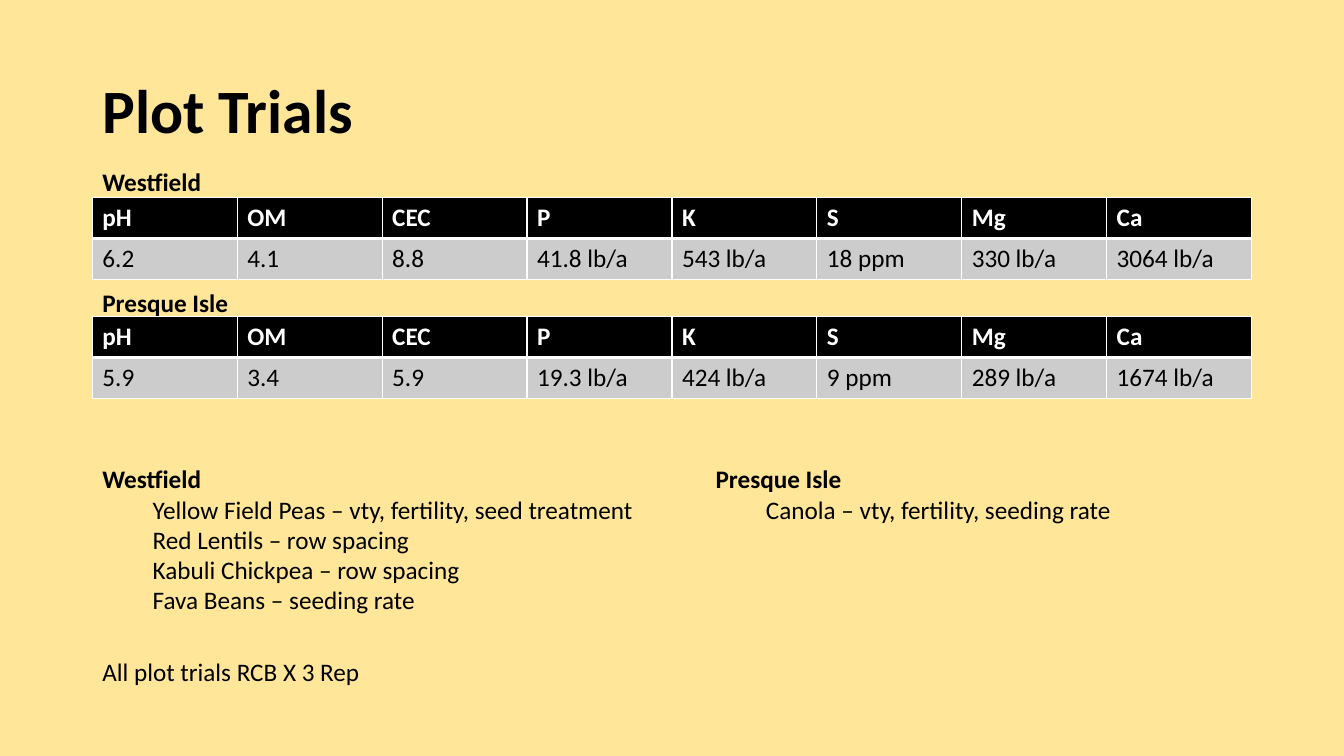
from lxml import etree
from pptx import Presentation
from pptx.dml.color import RGBColor
from pptx.enum import text as t
from pptx.oxml.ns import qn
from pptx.util import Pt

SAND = RGBColor(0xFF, 0xE6, 0x99)
BLACK = RGBColor(0, 0, 0)
WHITE = RGBColor(255, 255, 255)
GRAY = RGBColor(0xCC, 0xCC, 0xCC)
FONT = "Calibri"

TITLE = "Plot Trials"
NUTRIENTS = ["pH", "OM", "CEC", "P", "K", "S", "Mg", "Ca"]
SOIL_TESTS = [
    ("Westfield", 115.2, 141.1,
     ["6.2", "4.1", "8.8", "41.8 lb/a", "543 lb/a", "18 ppm", "330 lb/a", "3064 lb/a"]),
    ("Presque Isle", 201.6, 226.1,
     ["5.9", "3.4", "5.9", "19.3 lb/a", "424 lb/a", "9 ppm", "289 lb/a", "1674 lb/a"]),
]
TRIALS = [
    ("Westfield", 66, 116.6,
     ["Yellow Field Peas – vty, fertility, seed treatment", "Red Lentils – row spacing",
      "Kabuli Chickpea – row spacing", "Fava Beans – seeding rate"]),
    ("Presque Isle", 504, 51.1, ["Canola – vty, fertility, seeding rate"]),
]
FOOTNOTE = "All plot trials RCB X 3 Rep"

LEFT, WIDTH, ROW_HEIGHT = 66, 828, 29.2
TRIALS_TOP, TRIALS_WIDTH = 327.6, 480
LINE_HEIGHT = 29.1
INDENT = 36


def style(para, size=18, bold=False, color=BLACK):
    para.font.name = FONT
    para.font.size = Pt(size)
    para.font.bold = bold
    para.font.color.rgb = color


def add_text(page, left, top, width, height, heading, items=(), size=18, bold=True):
    box = page.shapes.add_textbox(Pt(left), Pt(top), Pt(width), Pt(height))
    frame = box.text_frame
    frame.word_wrap = True
    frame.text = heading
    style(frame.paragraphs[0], size, bold)
    for item in items:
        para = frame.add_paragraph()
        para.text = item
        para.level = 1
        properties = para._p.get_or_add_pPr()
        properties.set("marL", str(Pt(INDENT)))
        properties.set("indent", "0")
        style(para)
    return frame


def add_borders(cell, widths):
    properties = cell._tc.get_or_add_tcPr()
    for position, (side, width) in enumerate(zip("LRTB", widths)):
        line = etree.Element(qn(f"a:ln{side}"), w=str(Pt(width)))
        fill = etree.SubElement(line, qn("a:solidFill"))
        etree.SubElement(fill, qn("a:srgbClr"), val=str(WHITE))
        properties.insert(position, line)


def add_soil_table(page, top, values):
    rows = [(NUTRIENTS, BLACK, WHITE, True, (1, 1, 1, 3)),
            (values, GRAY, BLACK, False, (1, 1, 3, 1))]
    table = page.shapes.add_table(len(rows), len(NUTRIENTS), Pt(LEFT), Pt(top),
                                  Pt(WIDTH), Pt(ROW_HEIGHT * len(rows))).table
    for column in table.columns:
        column.width = Pt(WIDTH / len(NUTRIENTS))
    for r, (words, fill, color, bold, widths) in enumerate(rows):
        table.rows[r].height = Pt(ROW_HEIGHT)
        for c, word in enumerate(words):
            cell = table.cell(r, c)
            cell.text = word
            cell.fill.solid()
            cell.fill.fore_color.rgb = fill
            style(cell.text_frame.paragraphs[0], bold=bold, color=color)
            add_borders(cell, widths)


def main():
    deck = Presentation()
    deck.slide_width, deck.slide_height = Pt(960), Pt(540)
    page = deck.slides.add_slide(deck.slide_layouts[6])
    page.background.fill.solid()
    page.background.fill.fore_color.rgb = SAND

    title = add_text(page, LEFT, 28.75, WIDTH, 104.4, TITLE, size=44)
    title.vertical_anchor = t.MSO_ANCHOR.MIDDLE
    title.paragraphs[0].line_spacing = 0.9
    for site, label_top, table_top, values in SOIL_TESTS:
        add_soil_table(page, table_top, values)
        add_text(page, LEFT, label_top, 147, LINE_HEIGHT, site)
    for site, left, height, crops in TRIALS:
        add_text(page, left, TRIALS_TOP, TRIALS_WIDTH, height, site, crops)
    add_text(page, LEFT, 465.1, 707, LINE_HEIGHT, FOOTNOTE, bold=False)
    deck.save("out.pptx")


if __name__ == "__main__":
    main()
